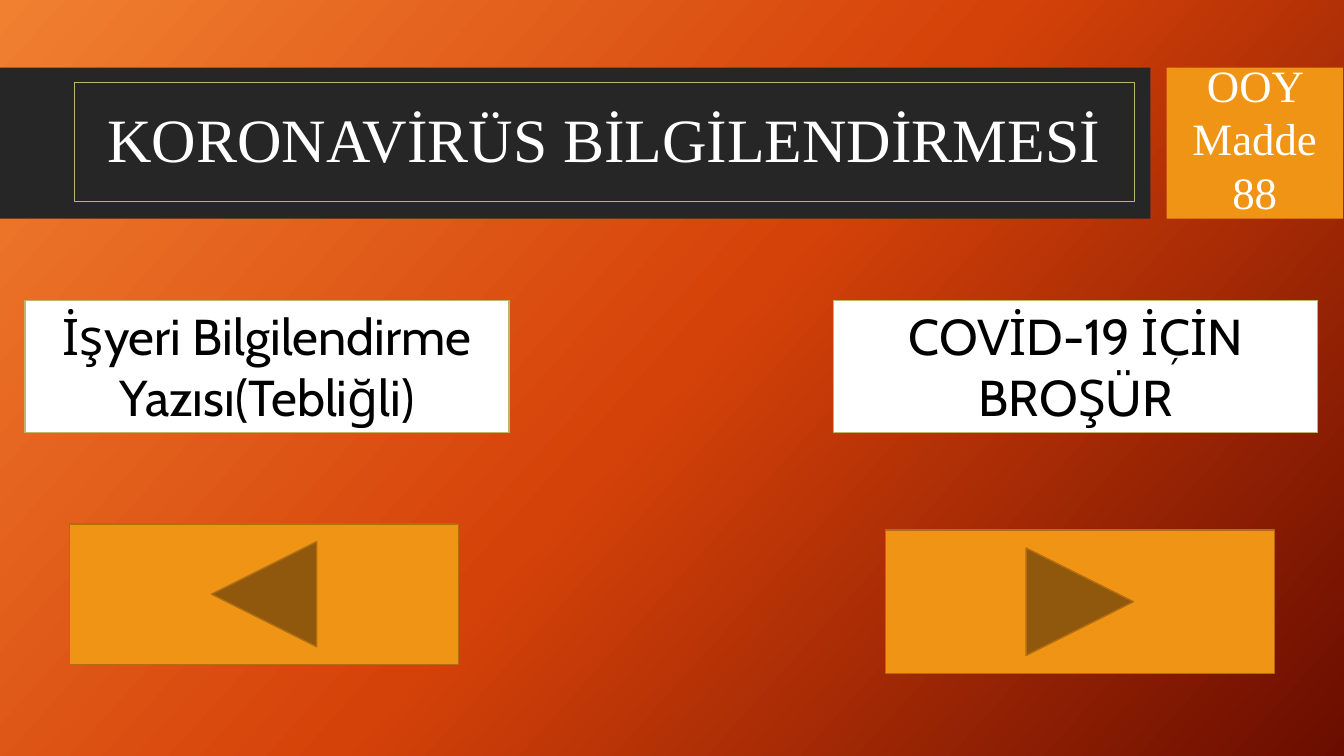
from copy import deepcopy

from pptx import Presentation
from pptx.dml.color import RGBColor
from pptx.enum.shapes import MSO_SHAPE as SHAPE
from pptx.enum.text import MSO_ANCHOR as ANCHOR, PP_ALIGN as ALIGN
from pptx.util import Inches, Pt

ORANGE, GOLD, BROWN = "F09415", "C1B56B", "B26D10"
DARK, WHITE, BLACK = "262626", "FFFFFF", "000000"

presentation = Presentation()
presentation.slide_width = Inches(13.33)
presentation.slide_height = Inches(7.5)
slide = presentation.slides.add_slide(presentation.slide_layouts[6])


def add_box(kind, left, top, width, height, fill=None, line=None):
    shape = slide.shapes.add_shape(
        kind, Inches(left), Inches(top), Inches(width), Inches(height))
    shape.shadow.inherit = False
    for part, color in ((shape.fill, fill), (shape.line.fill, line)):
        if color:
            part.solid()
            part.fore_color.rgb = RGBColor.from_string(color)
        else:
            part.background()
    if line:
        shape.line.width = Pt(1)
    return shape


def write(shape, text, size, font, color, anchor=ANCHOR.TOP, spacing=1.0):
    frame = shape.text_frame
    frame.word_wrap = True
    frame.vertical_anchor = anchor
    paragraph = frame.paragraphs[0]
    paragraph.text = text
    paragraph.alignment = ALIGN.CENTER
    paragraph.line_spacing = spacing
    paragraph.font.size = Pt(size)
    paragraph.font.name = font
    paragraph.font.color.rgb = RGBColor.from_string(color)


# Background: three-stop diagonal gradient
background = slide.background.fill
background.gradient()
background.gradient_angle = 360 - 42
first_stop = slide.element.xpath(".//p:bg//a:gs")[0]
first_stop.addnext(deepcopy(first_stop))
stops = ((0, "F18031"), (0.5, "D54209"), (1, "6A0D00"))
for stop, (position, color) in zip(background.gradient_stops, stops):
    stop.position = position
    stop.color.rgb = RGBColor.from_string(color)

# Header band with title and article number
add_box(SHAPE.RECTANGLE, 0, 0.67, 11.41, 1.5, fill=DARK)
add_box(SHAPE.RECTANGLE, 11.57, 0.67, 1.75, 1.5, fill=ORANGE)
title = add_box(SHAPE.RECTANGLE, 0.74, 0.82, 10.51, 1.18, line=GOLD)
write(title, "KORONAVİRÜS BİLGİLENDİRMESİ", 44, "Times New Roman", WHITE,
      anchor=ANCHOR.MIDDLE, spacing=0.9)
article = slide.shapes.add_textbox(
    Inches(11.56), Inches(0.52), Inches(1.77), Inches(1.72))
write(article, "OOY Madde 88", 32, "Times New Roman", WHITE)

# Navigation buttons
add_box(SHAPE.ACTION_BUTTON_FORWARD_OR_NEXT, 8.78, 5.26, 3.86, 1.42,
        fill=ORANGE, line=BROWN)
add_box(SHAPE.ACTION_BUTTON_BACK_OR_PREVIOUS, 0.69, 5.2, 3.86, 1.39,
        fill=ORANGE, line=BROWN)

# Document labels
labels = (
    (8.27, "COVİD-19 İÇİN BROŞÜR"),
    (0.25, "İşyeri Bilgilendirme Yazısı(Tebliğli)"),
)
for left, text in labels:
    label = add_box(SHAPE.RECTANGLE, left, 2.98, 4.8, 1.31,
                    fill=WHITE, line=GOLD)
    write(label, text, 36, "Cabin", BLACK)

presentation.save("out.pptx")
